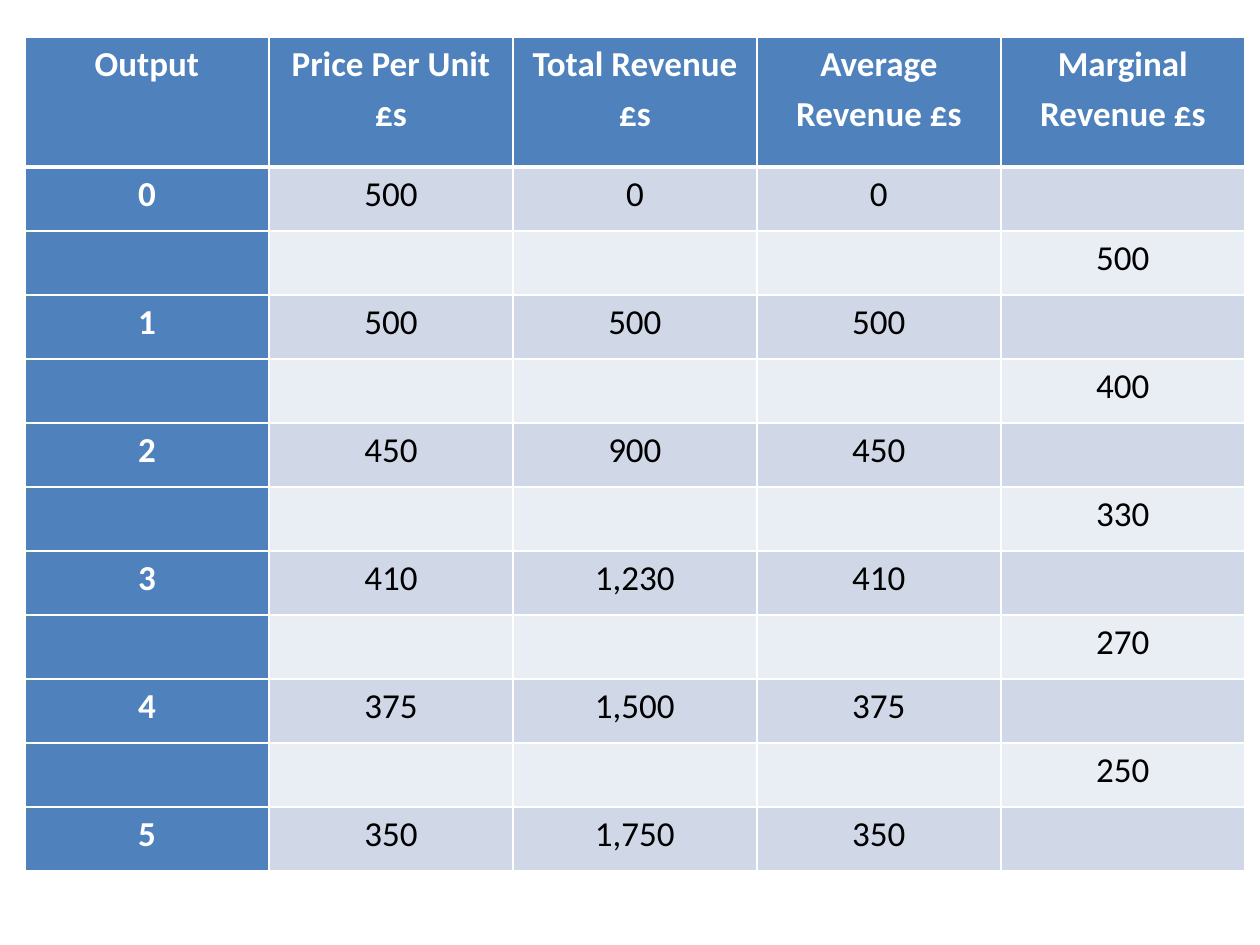
from lxml import etree
from pptx import Presentation
from pptx import util as u
from pptx.dml.color import RGBColor
from pptx.enum import text
from pptx.oxml.ns import qn

PX = 914400 // 126  # EMU per px
COLORS = {"header": "4F81BD", "band": "D0D8E8", "light": "E9EDF4",
          "white": "FFFFFF", "black": "000000"}
LEFT, TOP, COLUMN_WIDTH, HEADER_HEIGHT, ROW_HEIGHT = 25, 37, 244, 130, 64

HEADINGS = ["Output", "Price Per Unit £s", "Total Revenue £s",
            "Average Revenue £s", "Marginal Revenue £s"]
# output, price, total revenue, average revenue
OUTPUT_ROWS = [
    ["0", "500", "0", "0"],
    ["1", "500", "500", "500"],
    ["2", "450", "900", "450"],
    ["3", "410", "1,230", "410"],
    ["4", "375", "1,500", "375"],
    ["5", "350", "1,750", "350"],
]
MARGINAL_REVENUES = ["500", "400", "330", "270", "250"]


def color(name):
    return RGBColor.from_string(COLORS[name])


def set_format(target, values):
    for name, value in values.items():
        setattr(target, name, value)


def table_rows():
    """Marginal revenues sit on rows between the output levels."""
    rows = [HEADINGS]
    for index, values in enumerate(OUTPUT_ROWS):
        rows.append(values + [""])
        if index < len(MARGINAL_REVENUES):
            rows.append([""] * 4 + [MARGINAL_REVENUES[index]])
    return rows


def add_borders(cell, row):
    widths = {"L": 1, "R": 1, "T": 3 if row == 1 else 1, "B": 3 if row == 0 else 1}
    properties = cell._tc.get_or_add_tcPr()
    for side, width in widths.items():
        line = etree.SubElement(properties, qn(f"a:ln{side}"), w=str(u.Pt(width)))
        fill = etree.SubElement(line, qn("a:solidFill"))
        etree.SubElement(fill, qn("a:srgbClr"), val=COLORS["white"])


def fill_cell(cell, words, row, column):
    heading = row == 0 or column == 0
    add_borders(cell, row)
    cell.fill.solid()
    cell.fill.fore_color.rgb = color("header" if heading else "band" if row % 2 else "light")
    set_format(cell, {"margin_left": u.Inches(0.07), "margin_right": u.Inches(0.07),
                      "margin_top": 0, "margin_bottom": 0})
    para = cell.text_frame.paragraphs[0]
    set_format(para, {"alignment": text.PP_ALIGN.CENTER, "line_spacing": 1.15})
    if words:
        span = para.add_run()
        span.text = words
        set_format(span.font, {"name": "Calibri", "size": u.Pt(20), "bold": heading})
        span.font.color.rgb = color("white" if heading else "black")


def add_revenue_table(page):
    rows = table_rows()
    height = HEADER_HEIGHT + ROW_HEIGHT * (len(rows) - 1)
    frame = page.shapes.add_table(len(rows), len(HEADINGS), LEFT * PX, TOP * PX,
                                  COLUMN_WIDTH * len(HEADINGS) * PX, height * PX)
    table = frame.table
    for column in table.columns:
        column.width = COLUMN_WIDTH * PX
    for row, values in enumerate(rows):
        table.rows[row].height = (ROW_HEIGHT if row else HEADER_HEIGHT) * PX
        for column, words in enumerate(values):
            fill_cell(table.cell(row, column), words, row, column)


def main():
    deck = Presentation()
    set_format(deck, {"slide_width": u.Inches(10), "slide_height": u.Inches(7.5)})
    page = deck.slides.add_slide(deck.slide_layouts[6])  # blank layout
    add_revenue_table(page)
    deck.save("out.pptx")


if __name__ == "__main__":
    main()
